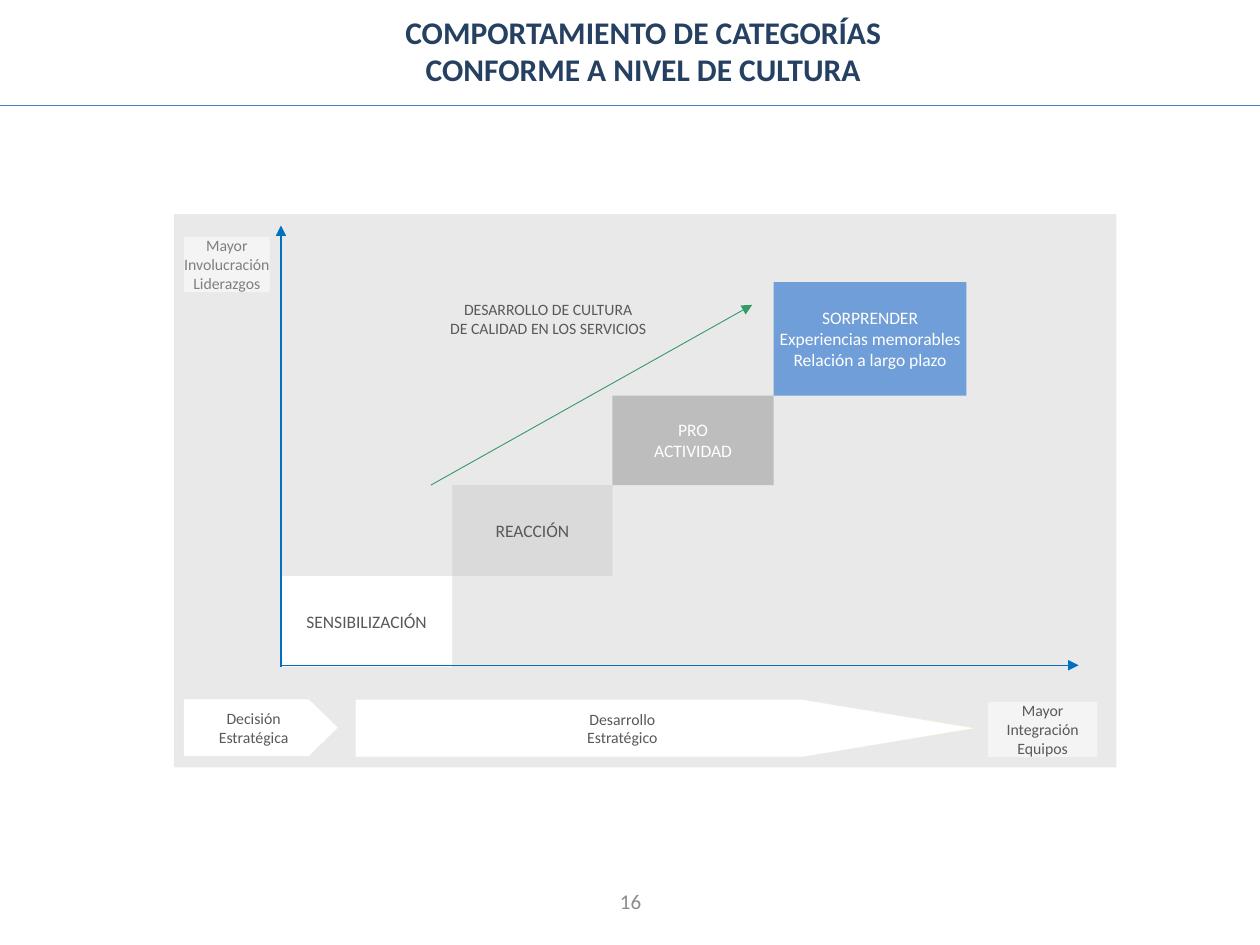
from dataclasses import dataclass

from lxml import etree
from pptx import Presentation
from pptx.dml.color import RGBColor
from pptx.enum.shapes import MSO_CONNECTOR, MSO_SHAPE
from pptx.enum.text import MSO_ANCHOR, MSO_AUTO_SIZE, PP_ALIGN
from pptx.oxml.ns import qn
from pptx.util import Inches, Pt

RECT = MSO_SHAPE.RECTANGLE
ARROW = MSO_SHAPE.PENTAGON
LINE = MSO_CONNECTOR.STRAIGHT
MIDDLE = MSO_ANCHOR.MIDDLE
TOP = MSO_ANCHOR.TOP
CENTER = PP_ALIGN.CENTER
FIXED = MSO_AUTO_SIZE.NONE
TITLE_ONLY = 5


@dataclass(frozen=True)
class Theme:
    font: str = "Calibri"
    navy: str = "254061"
    rule: str = "4B7EBC"
    axis: str = "0070C0"
    green: str = "339966"
    blue: str = "558ED5"
    cream: str = "EEECE1"
    panel: str = "D9D9D9"
    dark: str = "595959"
    gray: str = "7F7F7F"
    pale: str = "8C8C8C"
    white: str = "FFFFFF"
    head: float = 18
    page: float = 12
    step: float = 10
    note: float = 9


T = Theme()


@dataclass(frozen=True)
class Box:
    left: float
    top: float
    width: float
    height: float
    text: str = ""
    fill: str = T.white
    alpha: int = 100
    ink: str = T.dark
    size: float = T.note
    kind: int = RECT
    point: float = 0
    edge: str = ""


@dataclass(frozen=True)
class Step:
    text: str
    width: float
    height: float
    fill: str
    alpha: int
    ink: str


@dataclass(frozen=True)
class Link:
    start: tuple[float, float]
    end: tuple[float, float]
    color: str
    weight: float
    arrow: bool = True


def rgb(color: str) -> RGBColor:
    return RGBColor.from_string(color)


def write(shape, text: str, size: float, color: str, bold: bool = False,
          wrap: bool = True, anchor=MIDDLE) -> None:
    frame = shape.text_frame
    frame.text = text
    frame.auto_size = FIXED
    frame.word_wrap = wrap
    frame.vertical_anchor = anchor
    for line in frame.paragraphs:
        line.alignment = CENTER
        for run in line.runs:
            run.font.name = T.font
            run.font.size = Pt(size)
            run.font.bold = bold
            run.font.color.rgb = rgb(color)


def place(shape, left: float, top: float, width: float, height: float) -> None:
    shape.left, shape.top = Inches(left), Inches(top)
    shape.width, shape.height = Inches(width), Inches(height)


def draw_box(slide, box: Box) -> None:
    shape = slide.shapes.add_shape(
        box.kind, Inches(box.left), Inches(box.top),
        Inches(box.width), Inches(box.height))
    shape.shadow.inherit = False
    if box.point:
        shape.adjustments[0] = box.point
    shape.fill.solid()
    shape.fill.fore_color.rgb = rgb(box.fill)
    if box.alpha < 100:
        tint = shape.fill._xPr.find(".//" + qn("a:srgbClr"))
        etree.SubElement(tint, qn("a:alpha"), val=str(box.alpha * 1000))
    if box.edge:
        shape.line.color.rgb = rgb(box.edge)
        shape.line.width = Pt(0.5)
    else:
        shape.line.fill.background()
    if box.text:
        frame = shape.text_frame
        frame.margin_top = frame.margin_bottom = 0
        write(shape, box.text, box.size, box.ink, wrap=False)


def draw_link(slide, link: Link) -> None:
    line = slide.shapes.add_connector(
        LINE, *(Inches(n) for n in link.start + link.end))
    line.line.color.rgb = rgb(link.color)
    line.line.width = Pt(link.weight)
    if link.arrow:
        etree.SubElement(line.line._get_or_add_ln(), qn("a:tailEnd"),
                         type="triangle")
    etree.SubElement(line._element.spPr, qn("a:effectLst"))


def draw_steps(slide, steps: list[Step], left: float, base: float) -> None:
    # Each step starts at the top right corner of the one before
    for step in steps:
        base -= step.height
        draw_box(slide, Box(left, base, step.width, step.height, step.text,
                            step.fill, step.alpha, step.ink, T.step))
        left += step.width


def draw_text(slide, area: tuple[float, float, float, float], text: str,
              size: float, color: str, anchor=MIDDLE) -> None:
    box = slide.shapes.add_textbox(*(Inches(n) for n in area))
    write(box, text, size, color, anchor=anchor)


LEFT, BASE = 2.23, 5.29

STEPS = [
    Step("SENSIBILIZACIÓN", 1.36, 0.72, T.white, 100, T.dark),
    Step("REACCIÓN", 1.27, 0.72, T.dark, 10, T.dark),
    Step("PRO\nACTIVIDAD", 1.28, 0.71, T.dark, 30, T.white),
    Step("SORPRENDER\nExperiencias memorables\nRelación a largo plazo",
         1.53, 0.9, T.blue, 82, T.white),
]

NOTES = [
    Box(1.46, 5.55, 1.22, 0.45, "Decisión\nEstratégica",
        kind=ARROW, point=0.51),
    Box(2.82, 5.55, 4.93, 0.46, "Desarrollo\nEstratégico",
        kind=ARROW, point=3.01, edge=T.cream),
    Box(1.46, 1.88, 0.68, 0.44, "Mayor\nInvolucración\nLiderazgos",
        alpha=54, ink=T.gray),
    Box(7.84, 5.57, 0.87, 0.44, "Mayor\nIntegración\nEquipos", alpha=54),
]

LINKS = [
    Link((LEFT, BASE), (LEFT, 1.79), T.axis, 0.75),
    Link((LEFT, BASE - 0.01), (8.56, BASE - 0.01), T.axis, 0.75),
    Link((3.42, 3.85), (5.97, 2.42), T.green, 0.5),
    Link((0, 0.84), (10, 0.84), T.rule, 0.75, arrow=False),
]


def main() -> None:
    deck = Presentation()
    deck.slide_width, deck.slide_height = Inches(10), Inches(7.5)
    slide = deck.slides.add_slide(deck.slide_layouts[TITLE_ONLY])

    # Title and page number
    title = slide.shapes.title
    place(title, 2.48, 0.05, 5.25, 0.71)
    write(title, "COMPORTAMIENTO DE CATEGORÍAS CONFORME A NIVEL DE CULTURA",
          T.head, T.navy, bold=True, anchor=TOP)
    draw_text(slide, (3.42, 6.95, 3.17, 0.4), "16", T.page, T.pale)

    # Panel, stairs and notes
    draw_box(slide, Box(1.38, 1.7, 7.48, 4.39, fill=T.panel, alpha=57))
    draw_steps(slide, STEPS, LEFT, BASE)
    for note in NOTES:
        draw_box(slide, note)

    # Axes, growth arrow and title rule
    for link in LINKS:
        draw_link(slide, link)
    draw_text(slide, (3.15, 2.33, 2.4, 0.4),
              "DESARROLLO DE CULTURA\nDE CALIDAD EN LOS SERVICIOS",
              T.note, T.dark, TOP)

    deck.save("out.pptx")


if __name__ == "__main__":
    main()
